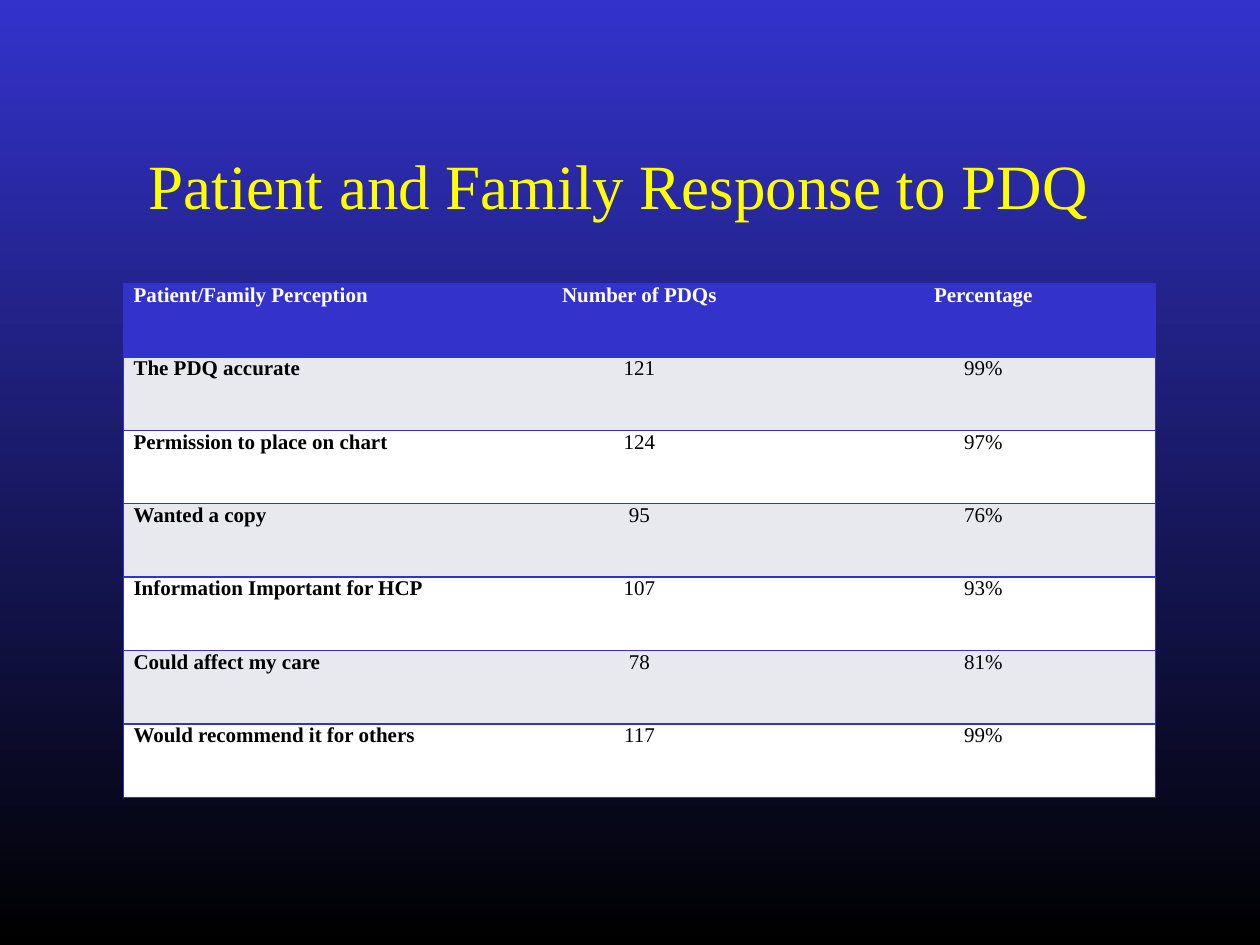
from lxml.etree import SubElement
from pptx import Presentation
from pptx.dml.color import RGBColor
from pptx.enum.text import MSO_ANCHOR as Anchor, PP_ALIGN as Align
from pptx.oxml.ns import qn
from pptx.util import Inches, Pt

FONT = "Times New Roman"
BLUE, BLACK, WHITE, YELLOW, GREY = "3333CC", "000000", "FFFFFF", "FFFF00", "E8E8EF"
NO_STYLE = "{2D5ABB26-0587-4C30-8999-92F81FD0307C}"

ROWS = [
    ("Patient/Family Perception", "Number of PDQs", "Percentage"),
    ("The PDQ accurate", "121", "99%"),
    ("Permission to place on chart", "124", "97%"),
    ("Wanted a copy", "95", "76%"),
    ("Information Important for HCP", "107", "93%"),
    ("Could affect my care", "78", "81%"),
    ("Would recommend it for others", "117", "99%"),
]


def color(value):
    return RGBColor.from_string(value)


class SlideBuilder:
    def __init__(self, presentation):
        self.width = presentation.slide_width
        self.height = presentation.slide_height
        self.slide = presentation.slides.add_slide(presentation.slide_layouts[5])

    def box(self, left, top, width, height):
        """Turn shares of the slide's size into lengths."""
        return (int(left * self.width), int(top * self.height),
                int(width * self.width), int(height * self.height))

    def style(self, paragraph, size, font_color, bold=False, align=Align.LEFT):
        font = paragraph.font
        font.name, font.size, font.bold = FONT, Pt(size), bold
        font.color.rgb = color(font_color)
        paragraph.alignment = align

    def background(self, top_color, bottom_color):
        fill = self.slide.background.fill
        fill.gradient()
        fill.gradient_angle = 270
        for stop, position, value in zip(fill.gradient_stops, (0, 1),
                                         (top_color, bottom_color)):
            stop.position = position
            stop.color.rgb = color(value)

    def title(self, text, box):
        title = self.slide.shapes.title
        title.left, title.top, title.width, title.height = self.box(*box)
        frame = title.text_frame
        frame.text = text
        frame.word_wrap = True
        frame.vertical_anchor = Anchor.TOP
        frame.margin_top, frame.margin_bottom = Inches(0.11), 0
        self.style(frame.paragraphs[0], 36, YELLOW)

    def border(self, cell, sides):
        """Draw 1 pt lines on the given sides, listed in L, R, T, B order."""
        properties = cell._tc.get_or_add_tcPr()
        for index, side in enumerate(sides):
            line = SubElement(properties, qn(f"a:ln{side}"), w=str(Pt(1)))
            fill = SubElement(line, qn("a:solidFill"))
            SubElement(fill, qn("a:srgbClr"), val=BLUE)
            properties.insert(index, line)

    def cell(self, cell, text, fill, font_color, bold, align):
        cell.text = text
        cell.margin_left = cell.margin_right = Inches(0.08)
        cell.margin_top = cell.margin_bottom = 0
        cell.fill.solid()
        cell.fill.fore_color.rgb = color(fill)
        self.style(cell.text_frame.paragraphs[0], 12, font_color, bold, align)

    def table(self, rows, box):
        last = len(rows[0]) - 1
        table = self.slide.shapes.add_table(len(rows), last + 1, *self.box(*box)).table
        table.first_row = table.horz_banding = False
        table._tbl.tblPr.find(qn("a:tableStyleId")).text = NO_STYLE
        for i, row in enumerate(rows):
            header = i == 0
            fill = BLUE if header else GREY if i % 2 else WHITE
            for j, text in enumerate(row):
                cell = table.cell(i, j)
                self.cell(cell, text, fill, WHITE if header else BLACK,
                          header or j == 0, Align.CENTER if j else Align.LEFT)
                self.border(cell, ("L" if j == 0 else "R" if j == last else "") + "TB")


def main():
    presentation = Presentation()
    presentation.slide_width, presentation.slide_height = Inches(10), Inches(7.5)
    builder = SlideBuilder(presentation)
    builder.background(BLUE, BLACK)
    # Heading
    builder.title("Patient and Family Response to PDQ", (0.108, 0.14, 0.825, 0.093))
    # Survey results
    builder.table(ROWS, (0.098, 0.3, 0.819, 0.544))
    presentation.save("out.pptx")


if __name__ == "__main__":
    main()
